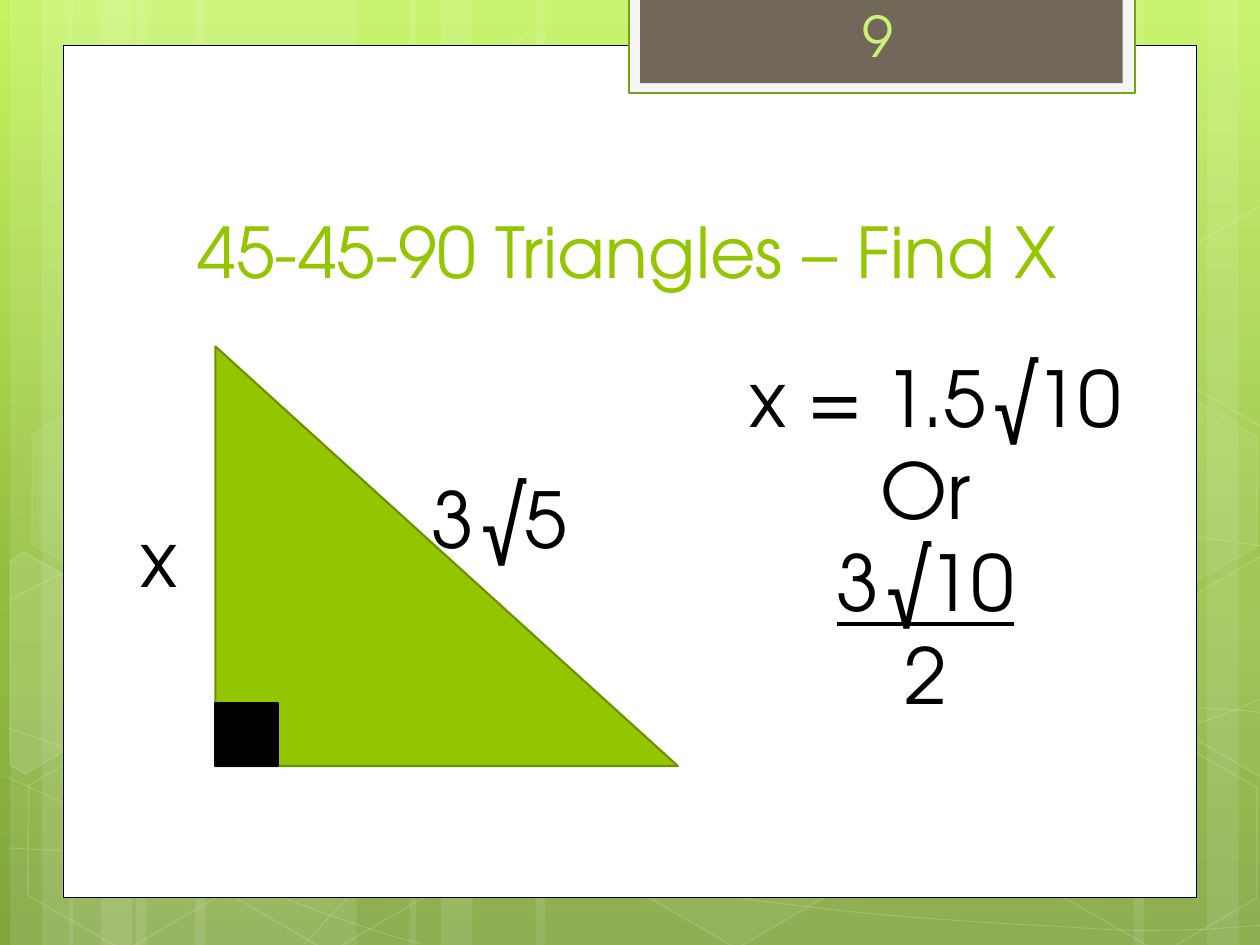
from copy import deepcopy
from math import cos, radians, sin

from lxml import etree
from pptx import Presentation
from pptx.dml.color import RGBColor
from pptx.enum.shapes import MSO_SHAPE
from pptx.enum.text import MSO_ANCHOR, MSO_AUTO_SIZE, PP_ALIGN
from pptx.oxml.ns import qn
from pptx.util import Inches, Pt

RECT, HEXAGON = MSO_SHAPE.RECTANGLE, MSO_SHAPE.HEXAGON
RIGHT_TRIANGLE = MSO_SHAPE.RIGHT_TRIANGLE
LEFT, CENTER = PP_ALIGN.LEFT, PP_ALIGN.CENTER
TOP, BOTTOM = MSO_ANCHOR.TOP, MSO_ANCHOR.BOTTOM
FIXED, GROW = MSO_AUTO_SIZE.NONE, MSO_AUTO_SIZE.SHAPE_TO_FIT_TEXT

WHITE = RGBColor(0xFF, 0xFF, 0xFF)
BLACK = RGBColor(0x00, 0x00, 0x00)
GREEN = RGBColor(0x94, 0xC6, 0x00)
DARK_GREEN = RGBColor(0x6D, 0x92, 0x00)
TAB_GREEN = RGBColor(0x74, 0xA5, 0x10)
PALE_GREEN = RGBColor(0xCA, 0xF2, 0x78)
OFF_WHITE = RGBColor(0xF5, 0xF5, 0xF5)
TAUPE = RGBColor(0x71, 0x68, 0x5A)
BACKGROUND = [(0, "C3F35F"), (62, "93BF3F"), (100, "81A53E")]
TILT = 30

# Left, width and rotation of the full-height background bands
BANDS = [(1.08, 1.75, 0), (0.08, 0.5, 0), (0.33, 0.83, 0), (1.55, 1.75, 0), (0.55, 0.5, 0),
         (0.8, 0.83, 0), (7.33, 1.75, 180), (9.58, 0.5, 180), (9, 0.83, 180),
         (4.25, 3.08, 0), (3.25, 0.5, 0), (3.5, 0.83, 0)]

# Each curve: a start point, then Bezier segments (two controls and an end)
CURVES = [
    [(0.07, 6.73), (0.61, 6.76), (1.15, 6.79), (1.9, 6.78), (2.65, 6.77), (3.58, 6.75),
     (4.58, 6.65), (5.58, 6.55), (7, 6.36), (7.92, 6.17), (8.83, 5.98), (9.77, 5.68),
     (10.07, 5.51)],
    [(0.07, 4.77), (0.36, 4.61), (0.65, 4.46), (1.21, 4.31), (1.78, 4.16), (2.59, 3.94),
     (3.47, 3.87), (4.36, 3.8), (5.44, 3.79), (6.54, 3.87), (7.64, 3.95), (9.47, 4.26),
     (10.07, 4.34)],
    [(0.06, 6.17), (1.27, 6.72), (2.47, 7.27), (3.34, 7.49)],
    [(0.07, 5.78), (0.38, 5.89), (0.7, 6), (1.28, 6.16), (1.86, 6.31), (2.73, 6.56),
     (3.57, 6.73), (4.4, 6.9), (5.45, 7.08), (6.28, 7.18), (7.11, 7.29), (8, 7.33),
     (8.53, 7.36), (9.05, 7.4), (9.19, 7.38), (9.45, 7.38), (9.71, 7.37), (9.89, 7.35),
     (10.07, 7.34)],
    [(2.42, 7.49), (2.6, 7.29), (2.78, 7.09), (3.02, 6.91), (3.26, 6.73), (3.6, 6.53),
     (3.88, 6.39), (4.16, 6.25), (4.33, 6.19), (4.7, 6.09), (5.06, 5.99), (5.73, 5.85),
     (6.08, 5.78), (6.44, 5.71), (6.49, 5.71), (6.8, 5.69), (7.11, 5.66), (7.6, 5.63),
     (7.94, 5.62), (8.29, 5.61), (8.86, 5.62), (8.86, 5.62), (9.08, 5.62), (9.31, 5.62),
     (9.53, 5.62), (9.71, 5.63), (9.88, 5.64), (9.97, 5.65), (10.06, 5.66), (10.03, 5.65),
     (10.06, 5.66)],
]

# Left, top, fill opacity and line opacity (percent; None for no fill)
HEXAGONS = [(3.34, 0.36, 4, 8), (4.97, 5.89, 6, 12), (0.11, 5.91, None, 12),
            (0.14, 3.12, 7, 8), (1.74, 5.92, None, 12), (7.53, 4.53, 10, 12),
            (8.34, 5.93, None, 12), (8.34, 3.14, 7, 8)]

# Hexagons cut off by the slide edge: fill opacity, centre and corners
CUT_HEXAGONS = [
    (10, (0.36, 5.35), [(0.08, 4.45), (0.19, 4.38), (0.96, 4.82), (0.95, 5.7), (0.2, 6.14),
                        (0.08, 6.07)]),
    (4, (9.85, 5.2), [(9.26, 4.85), (10.01, 4.41), (10.09, 4.46), (10.09, 6.13),
                      (10.02, 6.17), (9.26, 5.73)]),
    (None, (9.85, 2.41), [(9.26, 2.07), (10.01, 1.63), (10.1, 1.68), (10.09, 3.35),
                          (10.02, 3.39), (9.26, 2.95)]),
]


def untilt(points, center):
    """Turn points back about the centre, so that the tilt puts them in place."""
    (cx, cy), c, s = center, cos(radians(TILT)), sin(radians(TILT))
    return [(cx + (x - cx) * c + (y - cy) * s, cy - (x - cx) * s + (y - cy) * c)
            for x, y in points]


class SlideBuilder:
    font = "TeX Gyre Adventor"

    def __init__(self, slide):
        self.slide = slide

    def background(self, stops):
        fill = self.slide.background.fill
        fill.gradient()
        fill.gradient_angle = 270
        gs_list = next(self.slide.background._cSld.iter(qn("a:gsLst")))
        template = deepcopy(gs_list[0])
        for gs in list(gs_list):
            gs_list.remove(gs)
        for position, color in stops:
            gs = deepcopy(template)
            gs.set("pos", str(position * 1000))
            for child in list(gs):
                gs.remove(child)
            etree.SubElement(gs, qn("a:srgbClr"), val=color)
            gs_list.append(gs)

    def opacity(self, fill_parent, percent):
        color = fill_parent.find(qn("a:solidFill"))[0]
        etree.SubElement(color, qn("a:alpha"), val=str(percent * 1000))

    def style(self, sp, fill, line, width, fill_opacity=100, line_opacity=100):
        sp.shadow.inherit = False
        sp_pr = sp._element.spPr
        if fill is None:
            sp.fill.background()
        else:
            sp.fill.solid()
            sp.fill.fore_color.rgb = fill
            if fill_opacity < 100:
                self.opacity(sp_pr, fill_opacity)
        if line is None:
            sp.line.fill.background()
        else:
            sp.line.color.rgb = line
            sp.line.width = Pt(width)
            if line_opacity < 100:
                self.opacity(sp_pr.find(qn("a:ln")), line_opacity)

    def shape(self, kind, box, fill, line=None, width=1.25, **opacities):
        sp = self.slide.shapes.add_shape(kind, *map(Inches, box))
        self.style(sp, fill, line, width, **opacities)
        return sp

    def freeform(self, points, fill, width, closed, **opacities):
        corners = [(Inches(x), Inches(y)) for x, y in points]
        builder = self.slide.shapes.build_freeform(*corners[0])
        builder.add_line_segments(corners[1:], close=closed)
        sp = builder.convert_to_shape()
        self.style(sp, fill, WHITE, width, **opacities)
        return sp

    def curve(self, nodes, width, opacity):
        sp = self.freeform(nodes, None, width, False, line_opacity=opacity)
        # Join every three straight segments into one Bezier segment
        outline = next(sp._element.iter(qn("a:lnTo"))).getparent()
        lines = outline.findall(qn("a:lnTo"))
        for i in range(0, len(lines), 3):
            bezier = etree.SubElement(outline, qn("a:cubicBezTo"))
            for line in lines[i:i + 3]:
                bezier.append(line[0])
                outline.remove(line)

    def text(self, box, lines, size, color=BLACK, align=LEFT, anchor=TOP, indent=0,
             auto_size=GROW):
        tf = self.slide.shapes.add_textbox(*map(Inches, box)).text_frame
        tf.word_wrap = True
        tf.auto_size = auto_size
        tf.vertical_anchor = anchor
        for i, line in enumerate(lines):
            p = tf.add_paragraph() if i else tf.paragraphs[0]
            p.text = line
            p.alignment = align
            p.font.name, p.font.size, p.font.color.rgb = self.font, Pt(size), color
        # The indent moves the first line only
        if indent:
            tf.paragraphs[0]._p.get_or_add_pPr().set("marL", str(Inches(indent)))
        return tf


def main():
    prs = Presentation()
    prs.slide_width, prs.slide_height = Inches(10), Inches(7.5)
    s = SlideBuilder(prs.slides.add_slide(prs.slide_layouts[6]))

    # Background: gradient, bands, curves and hexagons
    s.background(BACKGROUND)
    for left, width, rotation in BANDS:
        s.shape(RECT, (left, 0, width, 7.5), WHITE, fill_opacity=10).rotation = rotation
    for nodes in CURVES:
        s.curve(nodes, 0.5, 20)
    for left, top, fill_opacity, line_opacity in HEXAGONS:
        sp = s.shape(HEXAGON, (left, top, 1.75, 1.52), WHITE if fill_opacity else None,
                     WHITE, 1, fill_opacity=fill_opacity, line_opacity=line_opacity)
        sp.rotation = TILT
        sp.adjustments[0] = 0.285
    for fill_opacity, center, corners in CUT_HEXAGONS:
        sp = s.freeform(untilt(corners, center), WHITE if fill_opacity else None, 1, True,
                        fill_opacity=fill_opacity, line_opacity=12)
        sp.rotation = TILT

    # Page panel and number tab
    s.shape(RECT, (0.5, 0.36, 9, 6.76), WHITE, BLACK, 0.5)
    s.shape(RECT, (4.99, -0.02, 4.02, 0.76), OFF_WHITE, TAB_GREEN)
    s.shape(RECT, (5.08, -0.02, 3.83, 0.68), TAUPE)

    # Title
    s.text((1.14, 1.12, 7.68, 1.25), ["45-45-90 Triangles – Find X"], 40, GREEN, CENTER, BOTTOM,
           auto_size=FIXED)

    # Triangle with its right angle and side labels
    s.shape(RIGHT_TRIANGLE, (1.71, 2.75, 3.67, 3.33), GREEN, DARK_GREEN)
    s.shape(RECT, (1.71, 5.58, 0.5, 0.5), BLACK, BLACK)
    s.text((0.68, 4, 1, 0.84), ["x"], 44, indent=0.34)
    s.text((2.99, 3.69, 2, 0.84), ["3√5"], 44, indent=0.34)

    # Answer, with the fraction bar as an underline
    answer = s.text((5.43, 2.73, 3.83, 3.06), ["x = 1.5√10", "Or", "3√10", "2"], 44,
                    align=CENTER, indent=0.16)
    answer.paragraphs[2].font.underline = True

    # Page number
    s.text((6.75, -0.04, 1.21, 0.64), ["9"], 32, PALE_GREEN)

    prs.save("out.pptx")


if __name__ == "__main__":
    main()
